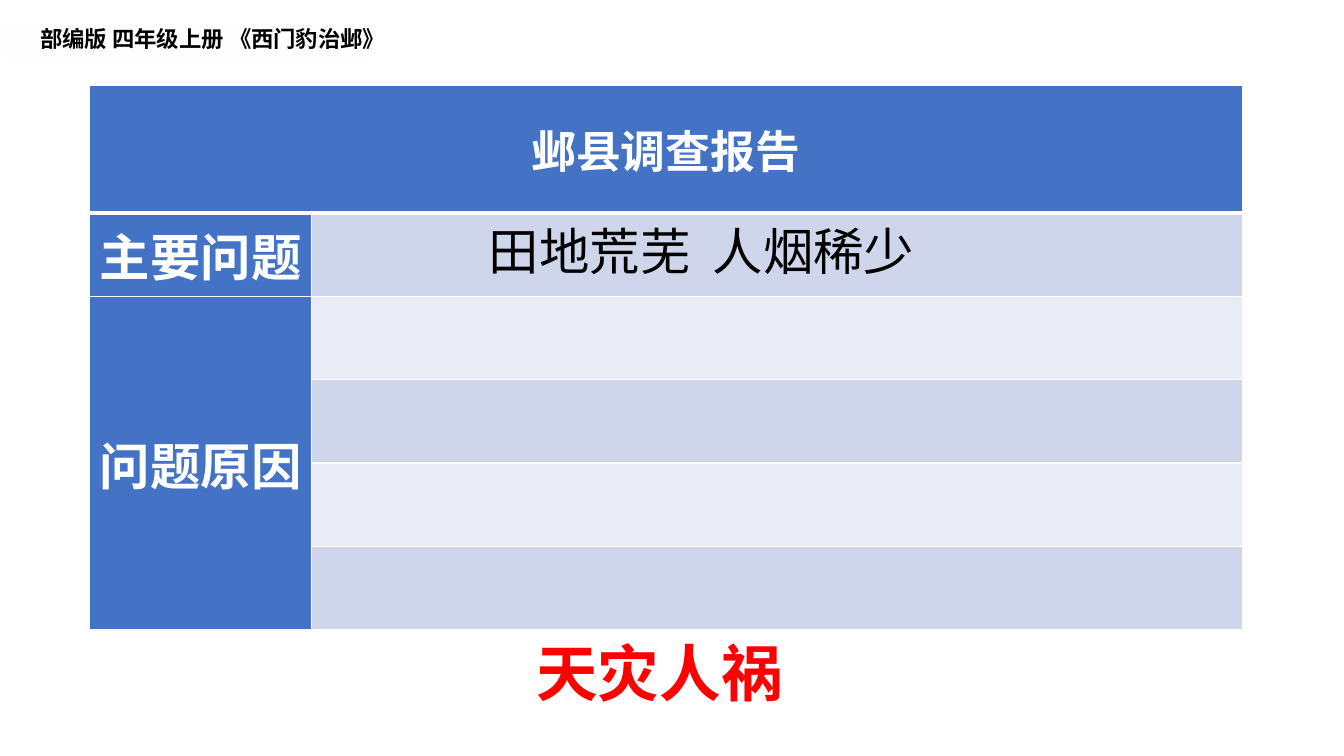
from lxml import etree
from pptx import Presentation
from pptx.dml.color import RGBColor
from pptx.enum import shapes, text
from pptx.oxml.ns import qn
from pptx.util import Inches, Pt

FONT = "Noto Sans CJK SC"
COLORS = {
    "black": "000000",
    "white": "FFFFFF",
    "red": "FF0000",
    "heading": "4472C4",
    "band_dark": "CFD5EA",
    "band_light": "E9EBF5",
}


def rgb(name):
    return RGBColor.from_string(COLORS[name])


def write(frame, wording, size, color, bold=False, align=text.PP_ALIGN.LEFT, tab=None):
    """Put one styled paragraph into a text frame, with an optional tab stop."""
    paragraph = frame.paragraphs[0]
    paragraph.text = wording
    paragraph.alignment = align
    properties = paragraph._p.get_or_add_pPr()
    if tab:
        stops = etree.SubElement(properties, qn("a:tabLst"))
        etree.SubElement(stops, qn("a:tab"), pos=str(Inches(tab)), algn="l")
    font = paragraph.font
    font.size, font.bold = Pt(size), bold
    font.color.rgb = rgb(color)
    font.name = FONT
    east_asian = etree.SubElement(properties.find(qn("a:defRPr")), qn("a:ea"))
    east_asian.set("typeface", FONT)


def add_caption(slide, box, wording, size, color, **style):
    frame = slide.shapes.add_textbox(*map(Inches, box)).text_frame
    frame.word_wrap = True
    write(frame, wording, size, color, **style)


def add_fading_strip(slide, box):
    """White strip behind the lesson name, fading out to the right."""
    strip = slide.shapes.add_shape(shapes.MSO_SHAPE.RECTANGLE, *map(Inches, box))
    strip.shadow.inherit = False
    strip.line.fill.background()
    strip.fill.gradient()
    strip.fill.gradient_angle = 0
    stops = strip._element.spPr.find(qn("a:gradFill")).find(qn("a:gsLst"))
    for stop in list(stops):
        stops.remove(stop)
    for position, opacity in ((40, 100), (77, 59), (99, 0)):
        stop = etree.SubElement(stops, qn("a:gs"), pos=str(position * 1000))
        white = etree.SubElement(stop, qn("a:srgbClr"), val=COLORS["white"])
        etree.SubElement(white, qn("a:alpha"), val=str(opacity * 1000))
    slide.shapes.title._element.addprevious(strip._element)


def set_lesson_title(slide, wording):
    title = slide.shapes.title
    title.left, title.top, title.width, title.height = map(
        Inches, (0.3, 0.2, 3.82, 0.37))
    frame = title.text_frame
    frame.word_wrap = False
    frame.auto_size = text.MSO_AUTO_SIZE.NONE
    frame.vertical_anchor = text.MSO_ANCHOR.TOP
    write(frame, wording, 16, "black", bold=True)


def style_cell(cell, fill, bottom=1):
    """White borders (widths in points) and a solid fill."""
    properties = cell._tc.get_or_add_tcPr()
    for side, width in (("L", 1), ("R", 1), ("T", 1), ("B", bottom)):
        line = etree.SubElement(properties, qn("a:ln" + side), w=str(Pt(width)))
        paint = etree.SubElement(line, qn("a:solidFill"))
        etree.SubElement(paint, qn("a:srgbClr"), val=COLORS["white"])
    cell.fill.solid()
    cell.fill.fore_color.rgb = rgb(fill)


def write_heading(cell, wording, size):
    cell.margin_left = cell.margin_right = Inches(0.07)
    cell.margin_top = cell.margin_bottom = 0
    cell.vertical_anchor = text.MSO_ANCHOR.MIDDLE
    write(cell.text_frame, wording, size, "white", bold=True,
          align=text.PP_ALIGN.CENTER)


def add_report(slide):
    height, heading_height, band_count = 5.4, 1.26, 5
    column_widths = [2.2, 9.23]
    row_heights = [heading_height] + [(height - heading_height) / band_count] * band_count
    report = slide.shapes.add_table(
        len(row_heights), len(column_widths), Inches(0.89), Inches(0.85),
        Inches(sum(column_widths)), Inches(height)).table
    for column, width in zip(report.columns, column_widths):
        column.width = Inches(width)
    for row, row_height in zip(report.rows, row_heights):
        row.height = Inches(row_height)

    # Heading row and column, then alternating bands
    for r in range(len(row_heights)):
        band = "band_dark" if r % 2 else "band_light"
        for c in range(len(column_widths)):
            style_cell(report.cell(r, c),
                       "heading" if r == 0 or c == 0 else band,
                       bottom=3 if r == 0 else 1)

    report.cell(0, 0).merge(report.cell(0, 1))
    report.cell(2, 0).merge(report.cell(5, 0))
    write_heading(report.cell(0, 0), "邺县调查报告", 32)
    write_heading(report.cell(1, 0), "主要问题", 36)
    write_heading(report.cell(2, 0), "问题原因", 36)


def main():
    deck = Presentation()
    deck.slide_width, deck.slide_height = Inches(13.33), Inches(7.5)
    slide = deck.slides.add_slide(deck.slide_layouts[5])

    # Lesson name on its strip
    set_lesson_title(slide, "部编版 四年级上册 《西门豹治邺》")
    add_fading_strip(slide, (0.04, 0.21, 3.69, 0.4))

    # Survey report
    add_report(slide)

    # Findings
    add_caption(slide, (4.75, 2.13, 5.32, 0.71), "田地荒芜\t人烟稀少",
                36, "black", tab=2.22)
    add_caption(slide, (5.22, 6.25, 2.88, 0.84), "天灾人祸",
                44, "red", bold=True)

    deck.save("out.pptx")


if __name__ == "__main__":
    main()
